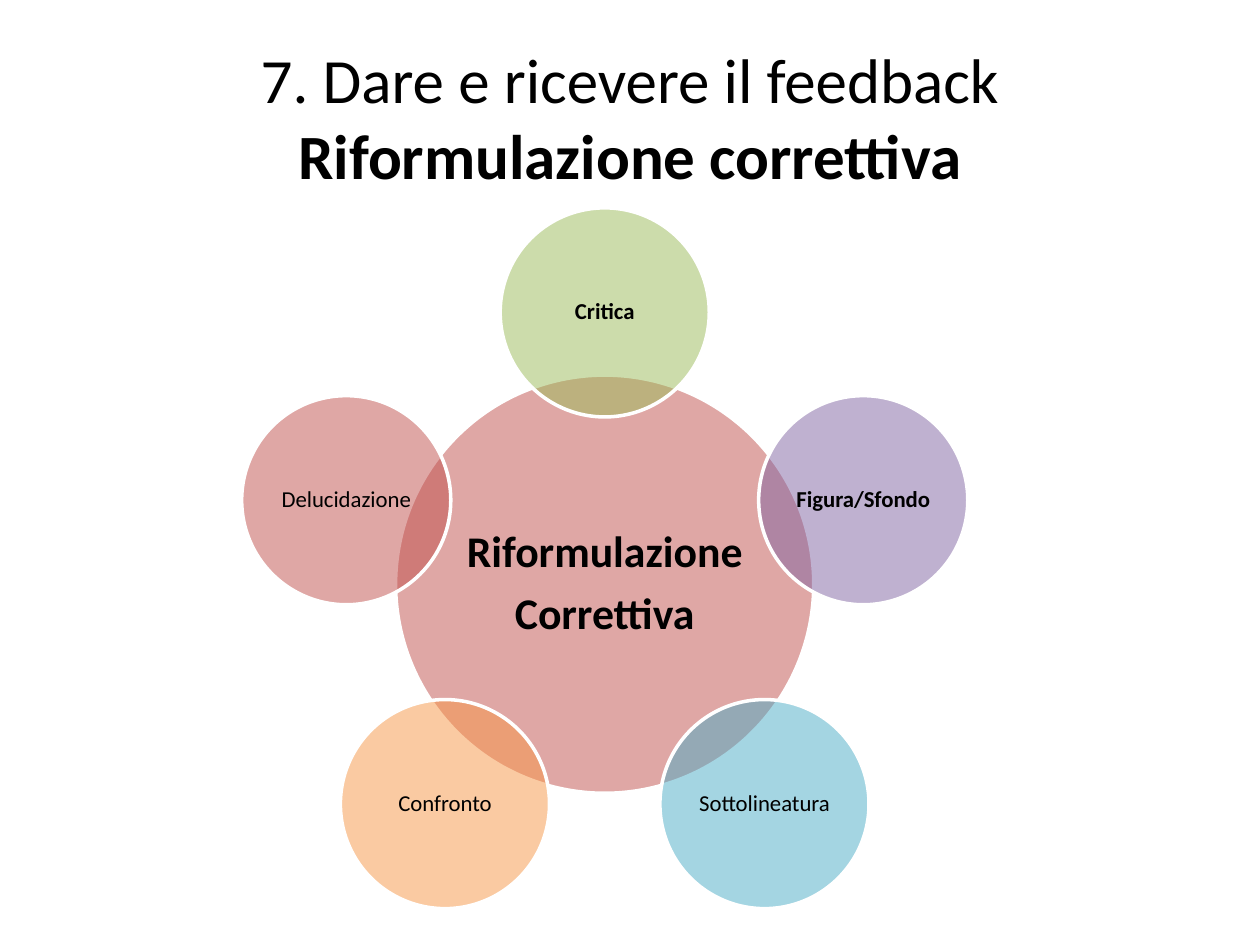
from dataclasses import dataclass
from math import cos, pi, sin

from lxml import etree
from pptx import Presentation
from pptx.dml.color import RGBColor
from pptx.enum.shapes import MSO_SHAPE
from pptx.enum.text import MSO_ANCHOR, PP_ALIGN
from pptx.oxml.ns import qn
from pptx.util import Cm, Pt

OVAL = MSO_SHAPE.OVAL
MIDDLE = MSO_ANCHOR.MIDDLE
CENTER = PP_ALIGN.CENTER


@dataclass(frozen=True)
class Theme:
    """Colours, font and sizes of the slide."""

    font: str = "Calibri"
    text: str = "000000"
    outline: str = "FFFFFF"
    red: str = "C0504D"
    green: str = "9BBB59"
    purple: str = "8064A2"
    aqua: str = "4BACC6"
    orange: str = "F79646"
    title_size: float = 36
    hub_size: float = 25
    label_size: float = 13
    outline_width: float = 2
    opacity: int = 50


@dataclass(frozen=True)
class Box:
    """A rectangle in centimetres."""

    left: float
    top: float
    width: float
    height: float

    def lengths(self):
        """Return the four sides as slide lengths."""
        return [Cm(side) for side in (self.left, self.top, self.width, self.height)]


THEME = Theme()
TITLE_BOX = Box(1.27, 0.76, 22.86, 3.18)
DIAGRAM_BOX = Box(4.86, 4.19, 14.66, 14.12)
TITLE = [("7. Dare e ricevere il feedback", False), ("Riformulazione correttiva", True)]
HUB_LINES = ["Riformulazione", "Correttiva"]
SATELLITES = [
    ("Critica", THEME.green, True),
    ("Figura/Sfondo", THEME.purple, True),
    ("Sottolineatura", THEME.aqua, False),
    ("Confronto", THEME.orange, False),
    ("Delucidazione", THEME.red, False),
]


def add_text(para, text, size, bold=False):
    """Append a formatted span to a centred paragraph."""
    para.alignment = CENTER
    span = para.add_run()
    span.text = text
    span.font.name = THEME.font
    span.font.size = Pt(size)
    span.font.bold = bold
    span.font.color.rgb = RGBColor.from_string(THEME.text)


def set_frame(frame, inset_x, inset_y):
    """Wrap the text, centre it vertically and set its insets."""
    frame.word_wrap = True
    frame.vertical_anchor = MIDDLE
    frame.margin_left = frame.margin_right = Cm(inset_x)
    frame.margin_top = frame.margin_bottom = Cm(inset_y)


def add_circle(group, center_x, center_y, diameter, color, lines, size, bold):
    """Draw a translucent circle with its label around a centre point."""
    box = Box(center_x - diameter / 2, center_y - diameter / 2, diameter, diameter)
    circle = group.shapes.add_shape(OVAL, *box.lengths())
    circle.shadow.inherit = False
    circle.fill.solid()
    circle.fill.fore_color.rgb = RGBColor.from_string(color)
    tint = circle.fill._xPr.find(qn("a:solidFill"))[0]
    etree.SubElement(tint, qn("a:alpha"), val=str(THEME.opacity * 1000))
    circle.line.color.rgb = RGBColor.from_string(THEME.outline)
    circle.line.width = Pt(THEME.outline_width)
    frame = circle.text_frame
    set_frame(frame, 0.05, 0.05)
    for index, line in enumerate(lines):
        para = frame.add_paragraph() if index else frame.paragraphs[0]
        para.line_spacing = 0.9
        para.space_after = Pt(size * 0.35)
        add_text(para, line, size=size, bold=bold)


def add_title(page, box):
    """Place the two-line title in its box."""
    frame = page.shapes.add_textbox(*box.lengths()).text_frame
    set_frame(frame, 0.25, 0.13)
    para = frame.paragraphs[0]
    for index, (text, bold) in enumerate(TITLE):
        if index:
            para.add_line_break()
        add_text(para, text, size=THEME.title_size, bold=bold)


def add_radial_diagram(page, box):
    """Place a hub circle and evenly spaced satellites in a box."""
    group = page.shapes.add_group_shape()
    hub = box.width * 0.575
    satellite = hub / 2
    orbit = hub * 0.65
    center_x = box.left + box.width / 2
    center_y = box.top + satellite / 2 + orbit
    add_circle(group, center_x, center_y, hub, THEME.red,
               HUB_LINES, THEME.hub_size, True)
    for index, (label, color, bold) in enumerate(SATELLITES):
        angle = 2 * pi * index / len(SATELLITES)
        add_circle(group, center_x + orbit * sin(angle), center_y - orbit * cos(angle),
                   satellite, color, [label], THEME.label_size, bold)


def main():
    """Build the deck and save it."""
    deck = Presentation()
    deck.slide_width, deck.slide_height = Cm(25.4), Cm(19.05)
    page = deck.slides.add_slide(deck.slide_layouts[6])
    add_title(page, TITLE_BOX)
    add_radial_diagram(page, DIAGRAM_BOX)
    deck.save("out.pptx")


if __name__ == "__main__":
    main()
